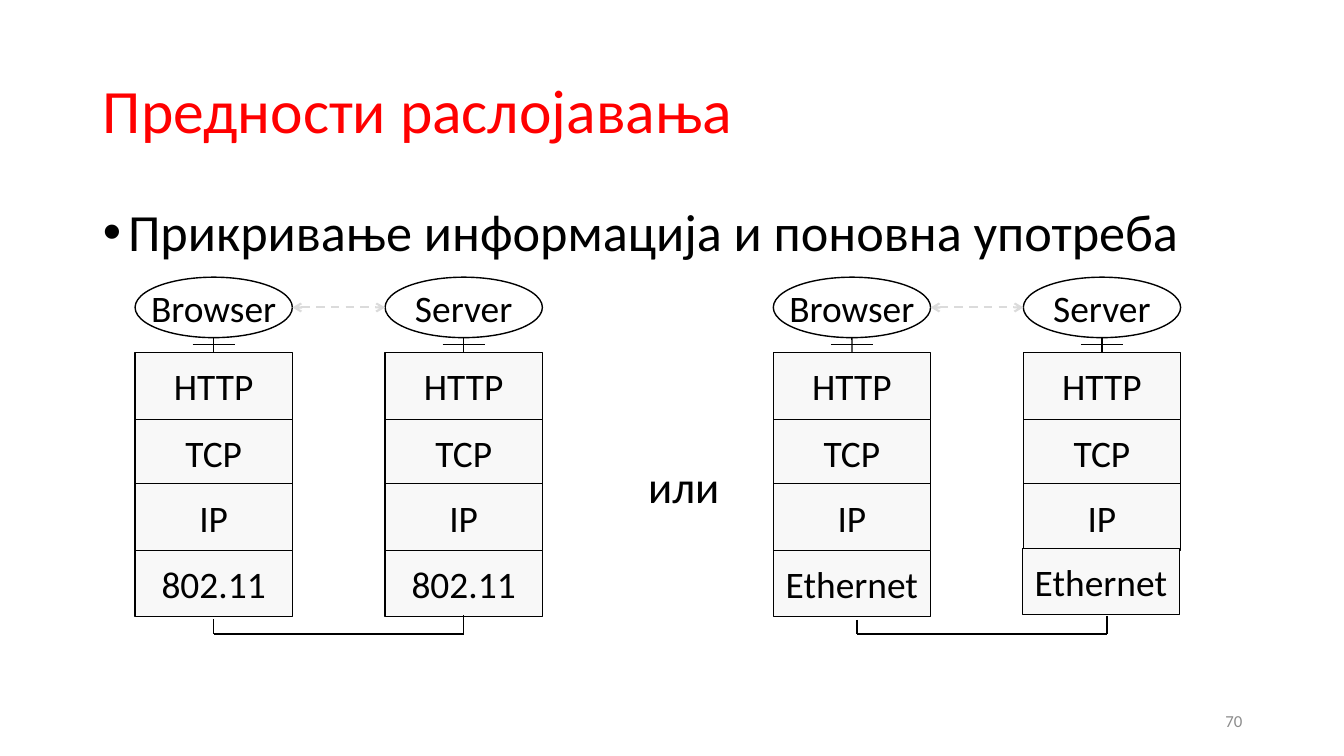
from dataclasses import dataclass
from lxml.etree import SubElement
from pptx import Presentation
from pptx.dml.color import RGBColor
from pptx.enum.dml import MSO_LINE
from pptx.enum.shapes import MSO_CONNECTOR, MSO_SHAPE
from pptx.enum.text import MSO_ANCHOR, MSO_AUTO_SIZE, PP_ALIGN
from pptx.oxml.ns import qn
from pptx.util import Inches, Pt

TITLE = "Предности раслојавања"
POINT = "Прикривање информација и поновна употреба"
CHOICE = "или"
PAGE = "70"
HOSTS = ("Browser", "Server")
SHARED = ("HTTP", "TCP", "IP")
NETS = (
    {"left": 1.34, "link": "802.11", "wire": 2.12, "ends": (6.14, 6.1), "shift": (0, 0)},
    {"left": 7.67, "link": "Ethernet", "wire": 8.5, "ends": (6.15, 6.11), "shift": (-0.01, -0.02)},
)
TOPS = (3.5, 4.16, 4.8, 5.46)
STEP, WIDE, HIGH = 2.48, 1.56, 0.66
OVAL_TOP, OVAL_HIGH = 2.75, 0.6
RUNG, HALF, FLOOR = 3.42, 0.21, 6.29


@dataclass(frozen=True)
class Theme:
    """Colours, font and type sizes."""
    font: str = "Calibri"
    red: str = "FF0000"
    ink: str = "000000"
    white: str = "FFFFFF"
    pale: str = "F8F8F8"
    faint: str = "DBDBDB"
    grey: str = "8C8C8C"
    title: float = 44
    body: float = 37.3
    choice: float = 32
    label: float = 26.7
    page: float = 12


LOOK = Theme()


def write(shape, text, size, color, align=PP_ALIGN.LEFT, anchor=MSO_ANCHOR.MIDDLE, wrap=True):
    """Fill a shape with one styled paragraph and return it."""
    frame = shape.text_frame
    frame.text = text
    frame.word_wrap = wrap
    frame.auto_size = MSO_AUTO_SIZE.NONE
    frame.vertical_anchor = anchor
    para = frame.paragraphs[0]
    para.alignment = align
    font = para.runs[0].font
    font.name, font.size = LOOK.font, Pt(size)
    font.color.rgb = RGBColor.from_string(color)
    return para


def place(shape, left, top, width, height):
    """Move and size a placeholder."""
    shape.left, shape.top = Inches(left), Inches(top)
    shape.width, shape.height = Inches(width), Inches(height)


def box(slide, kind, text, left, top, height, fill):
    """Draw an outlined shape with a centred label."""
    shape = slide.shapes.add_shape(kind, Inches(left), Inches(top), Inches(WIDE), Inches(height))
    shape.shadow.inherit = False
    shape.fill.solid()
    shape.fill.fore_color.rgb = RGBColor.from_string(fill)
    shape.line.color.rgb = RGBColor.from_string(LOOK.ink)
    shape.line.width = Pt(1)
    write(shape, text, LOOK.label, LOOK.ink, PP_ALIGN.CENTER, wrap=False)
    return shape


def rule(slide, x1, y1, x2, y2, color=LOOK.ink, width=1):
    """Draw a straight line."""
    line = slide.shapes.add_connector(
        MSO_CONNECTOR.STRAIGHT, Inches(x1), Inches(y1), Inches(x2), Inches(y2))
    line.line.color.rgb = RGBColor.from_string(color)
    line.line.width = Pt(width)
    SubElement(line._element.spPr, qn("a:effectLst"))
    return line


def stack(slide, host, link, left, shift):
    """Draw one host above its protocol layers."""
    mid = left + WIDE / 2
    first = None
    for name, top in zip(SHARED, TOPS):
        layer = box(slide, MSO_SHAPE.RECTANGLE, name, left, top, HIGH, LOOK.pale)
        first = first or layer
    right, down = shift
    box(slide, MSO_SHAPE.RECTANGLE, link, left + right, TOPS[-1] + down, HIGH, LOOK.pale)
    box(slide, MSO_SHAPE.OVAL, host, left, OVAL_TOP, OVAL_HIGH, LOOK.white)
    stem = rule(slide, mid, TOPS[0], mid, OVAL_TOP + OVAL_HIGH)
    stem.begin_connect(first, 0)
    rule(slide, mid - HALF, RUNG, mid + HALF, RUNG)


def network(slide, net):
    """Draw two hosts, their dashed link and the wire below."""
    left = net["left"]
    for spot, host in enumerate(HOSTS):
        shift = net["shift"] if spot else (0, 0)
        stack(slide, host, net["link"], left + spot * STEP, shift)
    mid = OVAL_TOP + OVAL_HIGH / 2
    talk = rule(slide, left + WIDE, mid, left + STEP, mid, LOOK.faint, 1.5)
    talk.line.dash_style = MSO_LINE.DASH
    for end in ("a:headEnd", "a:tailEnd"):
        SubElement(talk.line._ln, qn(end), type="arrow")
    start = net["wire"]
    for spot, top in enumerate(net["ends"]):
        rule(slide, start + spot * STEP, top, start + spot * STEP, FLOOR)
    rule(slide, start, FLOOR, start + STEP, FLOOR)


def heads(slide):
    """Set the title and the bulleted point."""
    title, body = slide.placeholders
    place(title, 0.92, 0.4, 11.5, 1.45)
    write(title, TITLE, LOOK.title, LOOK.red).line_spacing = 0.9
    place(body, 0.92, 2, 11.5, 4.76)
    para = write(body, POINT, LOOK.body, LOOK.ink, anchor=MSO_ANCHOR.TOP)
    para.line_spacing, para.space_before = 0.9, Pt(10)
    props = para._p.get_or_add_pPr()
    props.set("marL", str(Inches(0.25)))
    props.set("indent", str(Inches(-0.25)))
    SubElement(props, qn("a:buFont"), typeface="Arial")
    SubElement(props, qn("a:buChar"), char="•")


def note(slide, text, spot, size, color, **style):
    """Add a free line of text."""
    shape = slide.shapes.add_textbox(*map(Inches, spot))
    write(shape, text, size, color, **style)


def main():
    """Build and save the slide."""
    deck = Presentation()
    deck.slide_width, deck.slide_height = Inches(13.33), Inches(7.5)
    slide = deck.slides.add_slide(deck.slide_layouts[1])
    heads(slide)
    note(slide, PAGE, (9.42, 6.95, 3, 0.4), LOOK.page, LOOK.grey, align=PP_ALIGN.RIGHT)
    for net in NETS:
        network(slide, net)
    note(slide, CHOICE, (6.33, 4.5, 0.92, 0.64), LOOK.choice, LOOK.ink,
         anchor=MSO_ANCHOR.TOP, wrap=False)
    deck.save("out.pptx")


if __name__ == "__main__":
    main()
